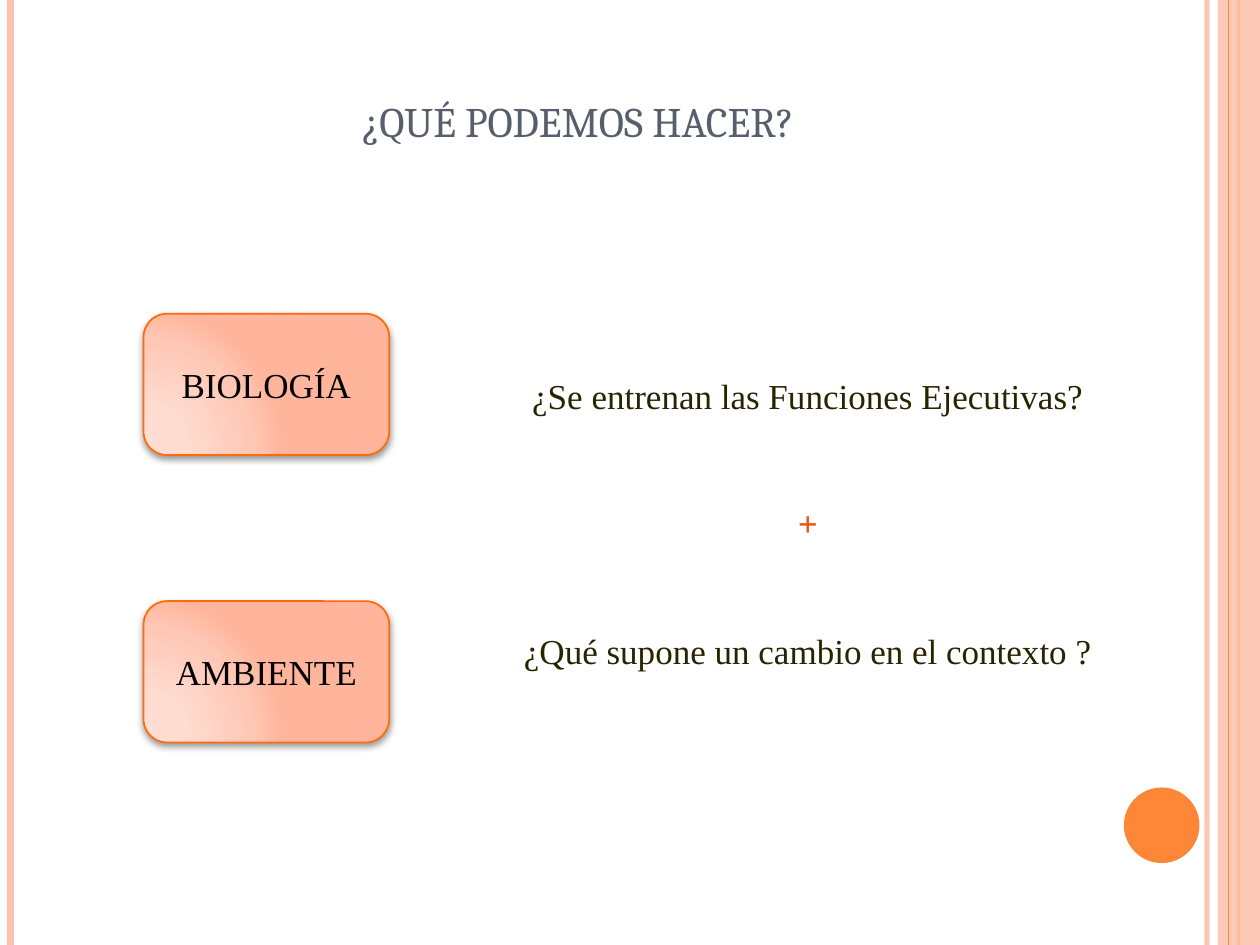
from dataclasses import dataclass

from pptx import Presentation
from pptx import oxml
from pptx.dml.color import RGBColor
from pptx.enum import shapes, text
from pptx.oxml import ns
from pptx.util import Pt


@dataclass(frozen=True)
class Theme:
    pale: str = "FEC3AE"
    orange: str = "FE8637"
    border: str = "FF6B0A"
    heading: str = "575F6D"
    body: str = "292400"
    plus: str = "EB530D"
    black: str = "000000"
    glow: tuple = ((0, "FFDED5"), (30, "FFDBD0"), (75, "FFC8B6"), (100, "FFB59B"))
    serif: str = "Times New Roman"
    title_font: str = "Cambria"
    title_size: int = 30
    body_size: int = 20


THEME = Theme()
WIDTH, HEIGHT = 720, 540


def rgb(value):
    return RGBColor.from_string(value)


def element(xml):
    head, rest = xml.split(">", 1)
    slash = "/" if head.endswith("/") else ""
    return oxml.parse_xml(f"{head.rstrip('/')} {ns.nsdecls('a')}{slash}>{rest}")


def set_alpha(owner, percent):
    color = owner.find(".//" + ns.qn("a:srgbClr"))
    color.append(element(f'<a:alpha val="{percent * 1000}"/>'))


def add_rail(slide, x, color, weight, alpha=None):
    c = slide.shapes.add_connector(
        shapes.MSO_CONNECTOR.STRAIGHT, Pt(x), Pt(0), Pt(x), Pt(HEIGHT))
    c.line.color.rgb = rgb(color)
    c.line.width = Pt(weight)
    if alpha:
        set_alpha(c.line._ln, alpha)
    c._element.spPr.append(element("<a:effectLst/>"))


def add_plain(slide, kind, box, color):
    s = slide.shapes.add_shape(kind, *map(Pt, box))
    s.fill.solid()
    s.fill.fore_color.rgb = rgb(color)
    s.line.fill.background()
    s.shadow.inherit = False
    return s


def style(p, font, size, color):
    p.alignment = text.PP_ALIGN.CENTER
    p.font.name = font
    p.font.size = Pt(size)
    p.font.color.rgb = rgb(color)


def add_card(slide, label, box):
    s = slide.shapes.add_shape(shapes.MSO_SHAPE.ROUNDED_RECTANGLE, *map(Pt, box))
    stops = "".join(
        f'<a:gs pos="{pos * 1000}"><a:srgbClr val="{c}"/></a:gs>' for pos, c in THEME.glow)
    s._element.spPr.append(element(
        f'<a:gradFill rotWithShape="1"><a:gsLst>{stops}</a:gsLst><a:path path="circle">'
        '<a:fillToRect l="5000" t="100000" r="120000" b="10000"/></a:path></a:gradFill>'))
    s.line.color.rgb = rgb(THEME.border)
    s.line.width = Pt(1)
    s.shadow.inherit = False
    shadow = element(
        f'<a:outerShdw blurRad="{Pt(4)}" dist="{Pt(2)}" dir="5400000" rotWithShape="0">'
        f'<a:srgbClr val="{THEME.black}"/></a:outerShdw>')
    set_alpha(shadow, 40)
    s._element.spPr.find(ns.qn("a:effectLst")).append(shadow)
    tf = s.text_frame
    tf.vertical_anchor = text.MSO_ANCHOR.MIDDLE
    p = tf.paragraphs[0]
    p.text = label
    style(p, THEME.serif, THEME.body_size, THEME.black)


def add_text_frame(slide, box):
    tf = slide.shapes.add_textbox(*map(Pt, box)).text_frame
    tf.word_wrap = True
    tf.vertical_anchor = text.MSO_ANCHOR.MIDDLE
    return tf


def add_title(slide, title, box):
    p = add_text_frame(slide, box).paragraphs[0]
    r = p.add_run()
    r.text = title
    r.font._element.set("cap", "small")
    style(p, THEME.title_font, THEME.title_size, THEME.heading)


def add_questions(slide, lines, box, indent, gap):
    tf = add_text_frame(slide, box)
    tf.margin_left = tf.margin_right = tf.margin_top = tf.margin_bottom = Pt(4.5)
    for i, (line, color, bold) in enumerate(lines):
        p = tf.add_paragraph() if i else tf.paragraphs[0]
        p.text = line
        style(p, THEME.serif, THEME.body_size, color)
        p.font.bold = bold
        p.space_before = Pt(gap if i else 0)
        p._p.get_or_add_pPr().set("marL", str(Pt(indent)))


def add_frame(slide):
    add_rail(slide, 689.75, THEME.pale, 3, 93)
    add_rail(slide, 6, THEME.pale, 4.5)
    add_rail(slide, 707.75, THEME.orange, 1.5)
    band = add_plain(slide, shapes.MSO_SHAPE.RECTANGLE, (696, 0, 24, HEIGHT), THEME.pale)
    set_alpha(band._element.spPr, 87)
    add_rail(slide, 702, THEME.orange, 0.75)
    add_plain(slide, shapes.MSO_SHAPE.OVAL, (642.25, 450, 43.2, 43.2), THEME.orange)


def main():
    prs = Presentation()
    prs.slide_width, prs.slide_height = Pt(WIDTH), Pt(HEIGHT)
    slide = prs.slides.add_slide(prs.slide_layouts[6])
    add_frame(slide)
    add_questions(slide, [
        ("¿Se entrenan las Funciones Ejecutivas?", THEME.body, False),
        ("+", THEME.plus, True),
        ("¿Qué supone un cambio en el contexto ?", THEME.body, False),
    ], (54, 185.75, 575.25, 226), indent=240, gap=49)
    for i, label in enumerate(("BIOLOGÍA", "AMBIENTE")):
        add_card(slide, label, (82, 179.25 + i * 164.25, 140.4, 80.75))
    add_title(slide, "¿qué podemos hacer?", (36, 21.6, 588.25, 90))
    prs.save("out.pptx")


if __name__ == "__main__":
    main()
